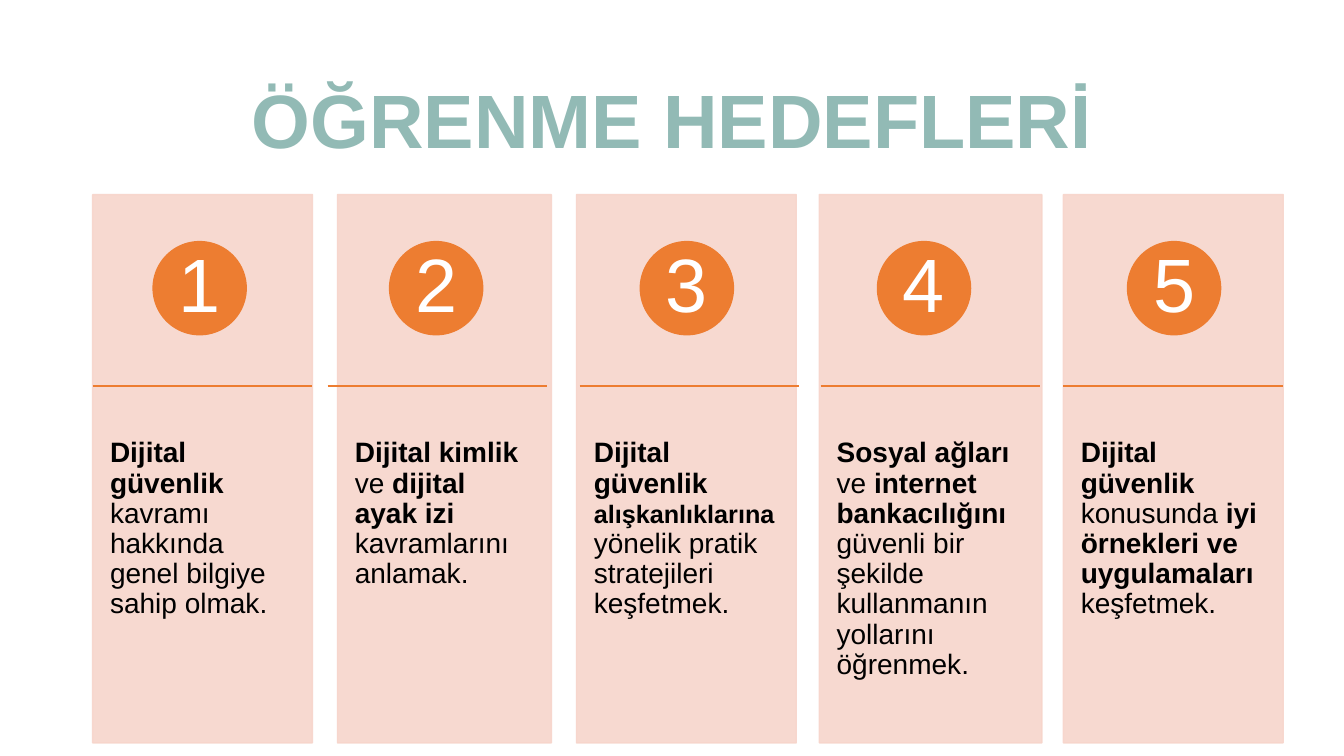
from lxml import etree
from pptx import Presentation
from pptx.dml.color import RGBColor
from pptx.enum.shapes import MSO_CONNECTOR, MSO_SHAPE
from pptx.enum.text import MSO_ANCHOR, PP_ALIGN
from pptx.oxml.ns import qn
from pptx.util import Pt

RECTANGLE, OVAL = MSO_SHAPE.RECTANGLE, MSO_SHAPE.OVAL
STRAIGHT = MSO_CONNECTOR.STRAIGHT
TOP, MIDDLE = MSO_ANCHOR.TOP, MSO_ANCHOR.MIDDLE
LEFT, CENTER = PP_ALIGN.LEFT, PP_ALIGN.CENTER
FONT = "Arial"
TEAL, PINK, ORANGE, WHITE, BLACK = "92BAB5", "F7D5CB", "ED7D31", "FFFFFF", "000000"
CARD_TOP, CARD_HEIGHT = 139, 391.6
RULE_WIDTH, BADGE_SIZE = 157, 66.5

# Each goal: card left, card width, badge left, rule left, runs of (text, bold, size)
GOALS = [
    (66.2, 157, 109.4, 66.2, [
        ("Dijital güvenlik ", True, 20),
        ("kavramı hakkında genel bilgiye sahip olmak.", False, 20)]),
    (241.1, 152.8, 278.3, 234, [
        ("Dijital kimlik", True, 20), (" ve ", False, 20),
        ("dijital ayak izi ", True, 20), ("kavramlarını anlamak.", False, 20)]),
    (411.8, 157, 457.4, 414, [
        ("Dijital güvenlik ", True, 20), ("alışkanlıklarına", True, 18),
        (" ", True, 20), ("yönelik pratik stratejileri keşfetmek.", False, 20)]),
    (585.2, 159, 626.8, 586.2, [
        ("Sosyal ağları ", True, 20), ("ve ", False, 20),
        ("internet bankacılığını ", True, 20),
        ("güvenli bir şekilde kullanmanın yollarını öğrenmek.", False, 20)]),
    (759.6, 157, 805.4, 759.6, [
        ("Dijital güvenlik ", True, 20), ("konusunda ", False, 20),
        ("iyi örnekleri ve uygulamaları ", True, 20), ("keşfetmek.", False, 20)]),
]


def rgb(color):
    """Turn a hex string into a colour."""
    return RGBColor.from_string(color)


def write(frame, runs, color, align, anchor, inset_x, inset_y):
    """Write one paragraph of (text, bold, size) runs into a text frame."""
    frame.word_wrap = True
    frame.vertical_anchor = anchor
    frame.margin_left = frame.margin_right = Pt(inset_x)
    frame.margin_top = frame.margin_bottom = Pt(inset_y)
    paragraph = frame.paragraphs[0]
    paragraph.alignment = align
    paragraph.line_spacing = 0.9
    for text, bold, size in runs:
        run = paragraph.add_run()
        run.text = text
        run.font.name = FONT
        run.font.size = Pt(size)
        run.font.bold = bold
        run.font.color.rgb = rgb(color)


def add_filled(slide, preset, left, top, width, height, color):
    """Add a preset shape whose fill and line share one colour."""
    shape = slide.shapes.add_shape(preset, Pt(left), Pt(top), Pt(width), Pt(height))
    shape.shadow.inherit = False
    shape.fill.solid()
    shape.fill.fore_color.rgb = rgb(color)
    shape.line.color.rgb = rgb(color)
    shape.line.width = Pt(1)
    return shape


def set_opacity(shape, percent):
    """Make the fill and line of a shape partly transparent."""
    for color in shape._element.spPr.iter(qn("a:srgbClr")):
        etree.SubElement(color, qn("a:alpha")).set("val", str(percent * 1000))


def add_rule(slide, left, top, width):
    """Add a thin horizontal divider."""
    rule = slide.shapes.add_connector(
        STRAIGHT, Pt(left), Pt(top), Pt(left + width), Pt(top))
    rule.line.color.rgb = rgb(ORANGE)
    rule.line.width = Pt(1)
    etree.SubElement(rule._element.spPr, qn("a:effectLst"))


def add_title(slide, left, top, width, height):
    """Add the slide heading."""
    title = slide.shapes.add_textbox(Pt(left), Pt(top), Pt(width), Pt(height))
    write(title.text_frame, [("ÖĞRENME HEDEFLERİ", True, 54)],
          TEAL, CENTER, MIDDLE, 7.2, 3.6)


def add_goal(slide, number, left, top, width, height, badge_left, rule_left, runs):
    """Add one goal card with its numbered badge, divider and text."""
    card = add_filled(slide, RECTANGLE, left, top, width, height, PINK)
    set_opacity(card, 90)
    goal = slide.shapes.add_textbox(
        Pt(left), Pt(top + 148.3), Pt(width), Pt(height - 156.2))
    write(goal.text_frame, runs, BLACK, LEFT, TOP, 12.4, 26)
    badge = add_filled(
        slide, OVAL, badge_left, top + 33.6, BADGE_SIZE, BADGE_SIZE, ORANGE)
    write(badge.text_frame, [(str(number), False, 54)], WHITE, CENTER, MIDDLE, 5, 1)
    add_rule(slide, rule_left, top + 136.8, RULE_WIDTH)


def main():
    """Build and save the slide."""
    deck = Presentation()
    deck.slide_width, deck.slide_height = Pt(960), Pt(540)
    slide = deck.slides.add_slide(deck.slide_layouts[6])
    add_title(slide, 66, 44, 828, 89.3)
    for number, (left, width, badge_left, rule_left, runs) in enumerate(GOALS, 1):
        add_goal(slide, number, left, CARD_TOP, width, CARD_HEIGHT,
                 badge_left, rule_left, runs)
    deck.save("out.pptx")


if __name__ == "__main__":
    main()
